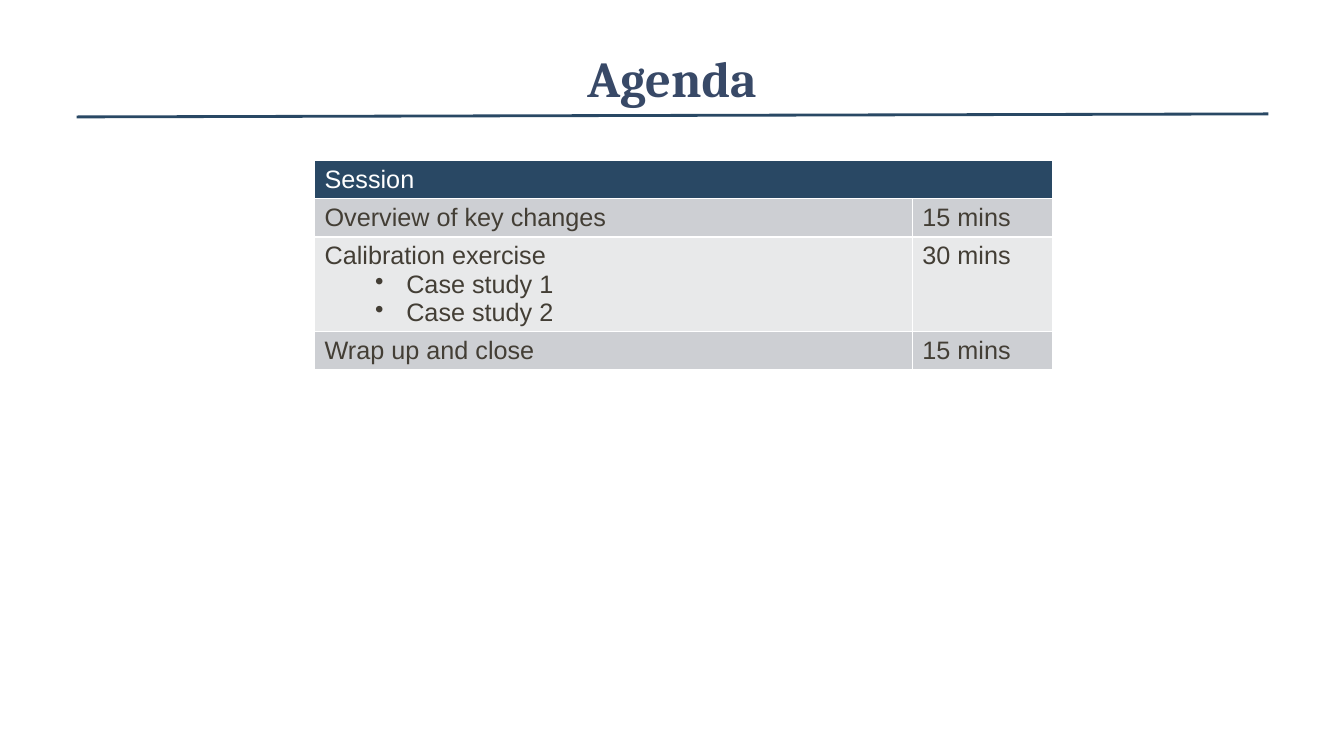
import pptx
import pptx.util
import pptx.dml.color
import pptx.enum.shapes
import pptx.enum.text
import pptx.oxml
import pptx.oxml.ns
from lxml import etree

WIDE, HIGH = 13.33, 7.5
HUES = {
    "navy": "294864",
    "title": "384967",
    "ink": "433E35",
    "white": "FFFFFF",
    "dark": "CDCFD3",
    "light": "E8E9EA",
}
ROWS = [
    (["Session"], ""),
    (["Overview of key changes"], "15 mins"),
    (["Calibration exercise", "Case study 1", "Case study 2"], "30 mins"),
    (["Wrap up and close"], "15 mins"),
]
LINE, PAD = 0.28, 0.1
SHARE = 0.81


def inch(size):
    """Turn inches into a length."""
    return pptx.util.Inches(size)


def hue(name):
    """Look up a named colour."""
    return pptx.dml.color.RGBColor.from_string(HUES[name])


def style(font, face, size, tone, bold=False):
    """Set the face, size, colour and weight of a font."""
    font.name, font.size, font.bold = face, pptx.util.Pt(size), bold
    font.color.rgb = hue(tone)


def edge(cell):
    """Draw thin white borders around a cell."""
    props = cell._tc.get_or_add_tcPr()
    for spot, side in enumerate(("lnL", "lnR", "lnT", "lnB")):
        line = pptx.oxml.parse_xml(
            f'<a:{side} {pptx.oxml.ns.nsdecls("a")} w="12700"><a:solidFill>'
            f'<a:srgbClr val="{HUES["white"]}"/></a:solidFill></a:{side}>'
        )
        props.insert(spot, line)


def bullet(para):
    """Indent a paragraph and give it a round bullet."""
    para.level = 1
    props = para._p.get_or_add_pPr()
    props.set("marL", str(inch(0.81)))
    props.set("indent", str(inch(-0.31)))
    mark = etree.SubElement(props, pptx.oxml.ns.qn("a:buChar"))
    mark.set("char", "•")


def write(cell, lines, fill, tone):
    """Fill a cell and write a heading line with bullets below it."""
    edge(cell)
    cell.fill.solid()
    cell.fill.fore_color.rgb = hue(fill)
    frame = cell.text_frame
    for spot, text in enumerate(lines):
        para = frame.add_paragraph() if spot else frame.paragraphs[0]
        para.text = text
        if spot:
            bullet(para)
        style(para.font, "Arial", 18, tone)


def head(slide, left, top, width, height):
    """Place the title in its box with a slightly rising rule below."""
    title = slide.shapes.title
    title.left, title.top = inch(left), inch(top)
    title.width, title.height = inch(width), inch(height)
    frame = title.text_frame
    frame.text = "Agenda"
    frame.auto_size = pptx.enum.text.MSO_AUTO_SIZE.NONE
    frame.vertical_anchor = pptx.enum.text.MSO_ANCHOR.MIDDLE
    para = frame.paragraphs[0]
    para.alignment = pptx.enum.text.PP_ALIGN.CENTER
    style(para.font, "Cambria", 36, "title", True)

    base = top + height
    rule = slide.shapes.add_connector(
        pptx.enum.shapes.MSO_CONNECTOR.STRAIGHT,
        inch(left - 0.18), inch(base),
        inch(left + width + 0.19), inch(base - 0.03),
    )
    rule.line.color.rgb = hue("navy")
    rule.line.width = pptx.util.Pt(2)
    etree.SubElement(rule._element.spPr, pptx.oxml.ns.qn("a:effectLst"))


def plan(slide, left, top, width):
    """Build the session table, each row as tall as its lines."""
    highs = [LINE * len(lines) + PAD for lines, _ in ROWS]
    table = slide.shapes.add_table(
        len(ROWS), 2, inch(left), inch(top), inch(width), inch(sum(highs))
    ).table
    table.columns[0].width = inch(width * SHARE)
    table.columns[1].width = inch(width * (1 - SHARE))
    for row, (lines, time) in enumerate(ROWS):
        table.rows[row].height = inch(highs[row])
        fill = ("dark" if row % 2 else "light") if row else "navy"
        tone = "ink" if row else "white"
        write(table.cell(row, 0), lines, fill, tone)
        write(table.cell(row, 1), [time] if time else [], fill, tone)
    table.cell(0, 0).merge(table.cell(0, 1))


def main():
    """Build and save the agenda slide."""
    deck = pptx.Presentation()
    deck.slide_width, deck.slide_height = inch(WIDE), inch(HIGH)
    slide = deck.slides.add_slide(deck.slide_layouts[5])
    slide.background.fill.solid()
    slide.background.fill.fore_color.rgb = hue("white")
    head(slide, 0.94, 0.37, 11.45, 0.79)
    plan(slide, 3.12, 1.59, 7.32)
    deck.save("out.pptx")


if __name__ == "__main__":
    main()
